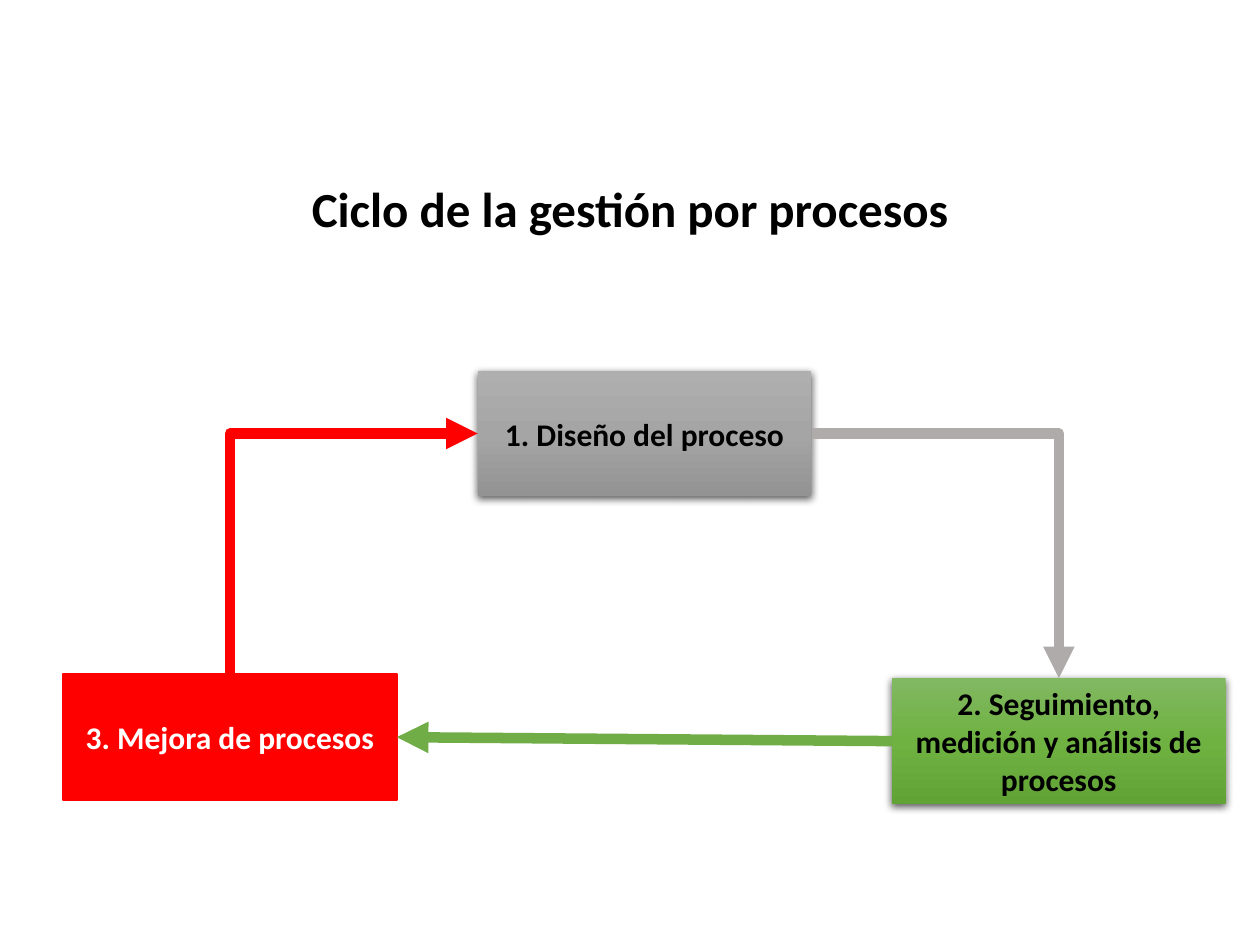
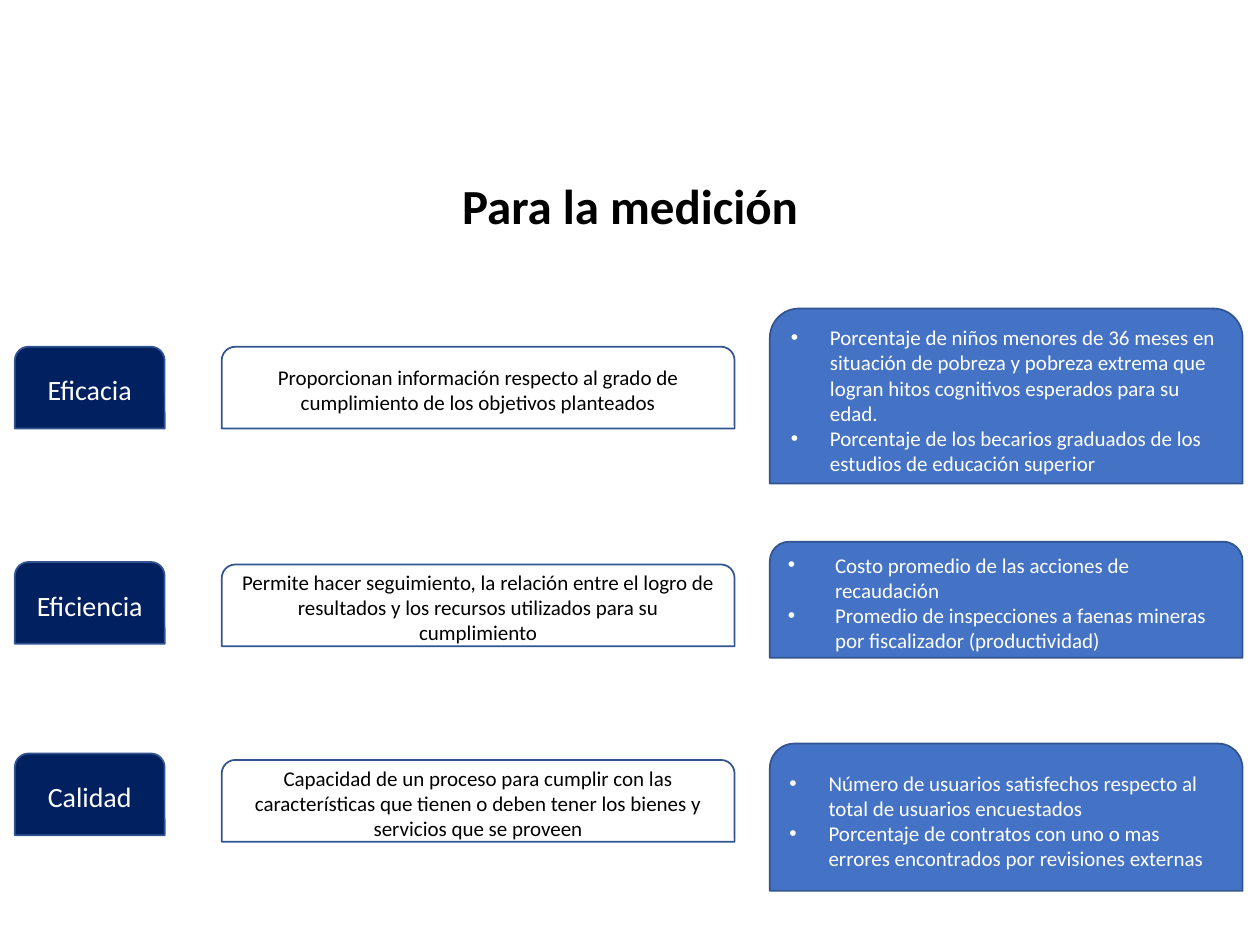
from copy import deepcopy
from dataclasses import dataclass

from lxml import etree
from pptx import Presentation
from pptx.dml.color import RGBColor
from pptx.enum.shapes import MSO_CONNECTOR, MSO_SHAPE
from pptx.enum.text import MSO_ANCHOR, PP_ALIGN
from pptx.oxml.ns import qn
from pptx.shapes.autoshape import Shape
from pptx.slide import Slide
from pptx.util import Cm, Pt

RECTANGLE = MSO_SHAPE.RECTANGLE
ROUNDED_TOP = MSO_SHAPE.ROUND_2_SAME_RECTANGLE
STRAIGHT, ELBOW = MSO_CONNECTOR.STRAIGHT, MSO_CONNECTOR.ELBOW
LEFT, CENTER = PP_ALIGN.LEFT, PP_ALIGN.CENTER
MIDDLE = MSO_ANCHOR.MIDDLE
TOP_SIDE, LEFT_SIDE, RIGHT_SIDE = 0, 1, 3

BLACK = RGBColor(0x00, 0x00, 0x00)
WHITE = RGBColor(0xFF, 0xFF, 0xFF)
RED = RGBColor(0xFF, 0x00, 0x00)
GREY = RGBColor(0xAF, 0xAB, 0xAB)
GREEN = RGBColor(0x70, 0xAD, 0x47)
NAVY = RGBColor(0x00, 0x20, 0x60)
BLUE = RGBColor(0x44, 0x72, 0xC4)
OUTLINE = RGBColor(0x32, 0x54, 0x91)
GREY_SHADES = (RGBColor(0xAF, 0xAF, 0xAF), RGBColor(0xA5, 0xA5, 0xA5),
               RGBColor(0x93, 0x93, 0x93))
GREEN_SHADES = (RGBColor(0x81, 0xB8, 0x61), RGBColor(0x6F, 0xB2, 0x42),
                RGBColor(0x62, 0xA3, 0x36))

FONT = "Calibri"
SLIDE_WIDTH, SLIDE_HEIGHT = 25.4, 19.05


@dataclass(frozen=True)
class Area:
    """Left, top, width and height in centimetres."""
    left: float
    top: float
    width: float
    height: float

    def lengths(self) -> tuple[Cm, Cm, Cm, Cm]:
        return Cm(self.left), Cm(self.top), Cm(self.width), Cm(self.height)


@dataclass(frozen=True)
class Stage:
    text: str
    left: float
    top: float
    shades: tuple[RGBColor, ...]
    text_color: RGBColor = BLACK


@dataclass(frozen=True)
class Flow:
    start: int
    start_side: int
    end: int
    end_side: int
    kind: MSO_CONNECTOR
    color: RGBColor
    arrow_end: str = "tailEnd"


@dataclass(frozen=True)
class Indicator:
    name: str
    name_top: float
    definition: str
    definition_top: float
    examples: tuple[str, ...]
    examples_top: float
    examples_height: float
    indent: float = 0.79


STAGES = (
    Stage("1. Diseño del proceso", 9.63, 7.47, GREY_SHADES),
    Stage("2. Seguimiento, medición y análisis de procesos", 17.98, 13.67, GREEN_SHADES),
    Stage("3. Mejora de procesos", 1.27, 13.59, (RED,), WHITE),
)
FLOWS = (
    Flow(0, RIGHT_SIDE, 1, TOP_SIDE, ELBOW, GREY),
    Flow(1, LEFT_SIDE, 2, RIGHT_SIDE, STRAIGHT, GREEN),
    # Drawn from stage 1 so that the bend falls above stage 3
    Flow(0, LEFT_SIDE, 2, TOP_SIDE, ELBOW, RED, "headEnd"),
)
INDICATORS = (
    Indicator(
        "Eficacia", 6.99,
        "Proporcionan información respecto al grado de cumplimiento de los "
        "objetivos planteados", 6.99,
        ("Porcentaje de niños menores de 36 meses en situación de pobreza y pobreza "
         "extrema que logran hitos cognitivos esperados para su edad.",
         "Porcentaje de los becarios graduados de los estudios de educación superior"),
        6.22, 3.53),
    Indicator(
        "Eficiencia", 11.33,
        "Permite hacer seguimiento, la relación entre el logro de resultados y los "
        "recursos utilizados para su cumplimiento", 11.38,
        ("Costo promedio de las acciones de recaudación",
         "Promedio de inspecciones a faenas mineras por fiscalizador (productividad)"),
        10.92, 2.34, 0.95),
    Indicator(
        "Calidad", 15.19,
        "Capacidad de un proceso para cumplir con las características que tienen o "
        "deben tener los bienes y servicios que se proveen", 15.32,
        ("Número de usuarios satisfechos respecto al total de usuarios encuestados",
         "Porcentaje de contratos con uno o mas errores encontrados por revisiones externas"),
        14.99, 2.97),
)


def write_text(shape: Shape, *texts: str, size: float, color: RGBColor = BLACK,
               bold: bool = False, align: PP_ALIGN = CENTER,
               spacing: float = 1.0, bullet_indent: float = 0) -> None:
    """Write one paragraph per text, bulleted when an indent is given."""
    frame = shape.text_frame
    frame.word_wrap = True
    frame.vertical_anchor = MIDDLE
    for index, text in enumerate(texts):
        paragraph = frame.add_paragraph() if index else frame.paragraphs[0]
        paragraph.alignment = align
        paragraph.line_spacing = spacing
        if bullet_indent:
            properties = paragraph._p.get_or_add_pPr()
            properties.set("marL", str(Cm(bullet_indent)))
            properties.set("indent", str(-Cm(bullet_indent)))
            etree.SubElement(properties, qn("a:buFont"), typeface="Arial")
            etree.SubElement(properties, qn("a:buChar"), char="•")
        run = paragraph.add_run()
        run.text = text
        run.font.name = FONT
        run.font.size = Pt(size)
        run.font.bold = bold
        run.font.color.rgb = color


def add_title(slide: Slide, text: str, top: float, width: float) -> None:
    area = Area((SLIDE_WIDTH - width) / 2, top, width, 2.59)
    title = slide.shapes.add_textbox(*area.lengths())
    write_text(title, text, size=28, bold=True, spacing=0.9)


def add_box(slide: Slide, kind: MSO_SHAPE, area: Area, fill: RGBColor,
            outline: RGBColor) -> Shape:
    box = slide.shapes.add_shape(kind, *area.lengths())
    box.shadow.inherit = False
    box.fill.solid()
    box.fill.fore_color.rgb = fill
    box.line.color.rgb = outline
    box.line.width = Pt(1)
    return box


def add_relief(box: Shape, shades: tuple[RGBColor, ...]) -> None:
    """Give a box a downward gradient, no outline and a soft shadow."""
    box.line.fill.background()
    box.fill.gradient()
    box.fill.gradient_angle = 270
    properties = box._element.spPr
    stop_list = properties.find(".//" + qn("a:gsLst"))
    stop_list.append(deepcopy(stop_list[0]))
    for index, (stop, shade) in enumerate(zip(box.fill.gradient_stops, shades)):
        stop.position = index / (len(shades) - 1)
        stop.color.rgb = shade
    shadow = etree.SubElement(
        properties.find(qn("a:effectLst")), qn("a:outerShdw"), blurRad=str(Pt(4.5)),
        dist=str(Pt(1.5)), dir="5400000", algn="ctr", rotWithShape="0")
    color = etree.SubElement(shadow, qn("a:srgbClr"), val=str(BLACK))
    etree.SubElement(color, qn("a:alpha"), val="63000")


def add_stage(slide: Slide, stage: Stage) -> Shape:
    area = Area(stage.left, stage.top, 6.73, 2.54)
    box = add_box(slide, RECTANGLE, area, stage.shades[0], stage.shades[0])
    if len(stage.shades) > 1:
        add_relief(box, stage.shades)
    write_text(box, stage.text, size=18, color=stage.text_color, bold=True)
    return box


def add_flow(slide: Slide, flow: Flow, boxes: list[Shape]) -> None:
    arrow = slide.shapes.add_connector(flow.kind, 0, 0, 0, 0)
    arrow.begin_connect(boxes[flow.start], flow.start_side)
    arrow.end_connect(boxes[flow.end], flow.end_side)
    arrow.line.color.rgb = flow.color
    arrow.line.width = Pt(6)
    properties = arrow._element.spPr
    if flow.kind == ELBOW:
        # A single bend
        properties.find(qn("a:prstGeom")).set("prst", "bentConnector2")
    etree.SubElement(properties.find(qn("a:ln")), qn("a:" + flow.arrow_end), type="triangle")
    etree.SubElement(properties, qn("a:effectLst"))


def add_indicator(slide: Slide, indicator: Indicator) -> None:
    name_area = Area(0.3, indicator.name_top, 3.02, 1.65)
    name = add_box(slide, ROUNDED_TOP, name_area, NAVY, OUTLINE)
    write_text(name, indicator.name, size=16, color=WHITE)

    definition_area = Area(4.47, indicator.definition_top, 10.34, 1.65)
    definition = add_box(slide, ROUNDED_TOP, definition_area, WHITE, OUTLINE)
    write_text(definition, indicator.definition, size=12)

    examples_area = Area(15.52, indicator.examples_top, 9.53, indicator.examples_height)
    examples = add_box(slide, ROUNDED_TOP, examples_area, BLUE, OUTLINE)
    write_text(examples, *indicator.examples, size=12, color=WHITE, align=LEFT,
               bullet_indent=indicator.indent)


def main() -> None:
    presentation = Presentation()
    presentation.slide_width = Cm(SLIDE_WIDTH)
    presentation.slide_height = Cm(SLIDE_HEIGHT)
    blank = presentation.slide_layouts[6]

    # Process management cycle
    cycle = presentation.slides.add_slide(blank)
    add_title(cycle, "Ciclo de la gestión por procesos", 2.97, 24.03)
    stage_boxes = [add_stage(cycle, stage) for stage in STAGES]
    for flow in FLOWS:
        add_flow(cycle, flow, stage_boxes)

    # Indicators: name, definition and examples
    measurement = presentation.slides.add_slide(blank)
    add_title(measurement, "Para la medición", 2.92, 23.5)
    for indicator in INDICATORS:
        add_indicator(measurement, indicator)

    presentation.save("out.pptx")


if __name__ == "__main__":
    main()
